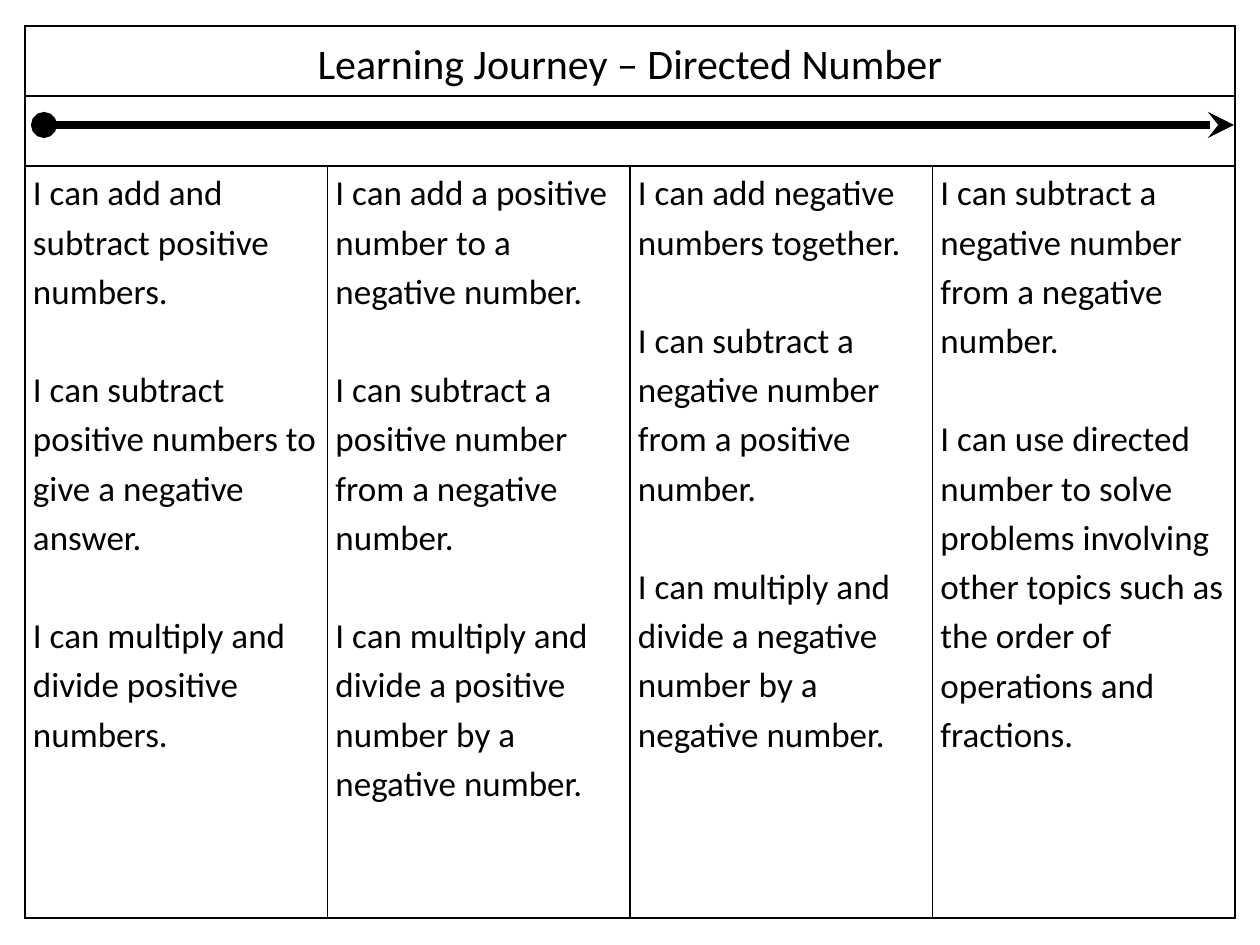
"""Build a one-slide learning journey table for directed number."""
from lxml.etree import SubElement
from pptx import Presentation
from pptx.dml.color import RGBColor
from pptx.enum.shapes import MSO_CONNECTOR as Connector
from pptx.enum.text import MSO_ANCHOR as Anchor, PP_ALIGN as Align
from pptx.oxml.ns import qn
from pptx.util import Emu, Pt

TITLE = "Learning Journey – Directed Number"
STAGES = [
    ["I can add and subtract positive numbers.",
     "I can subtract positive numbers to give a negative answer.",
     "I can multiply and divide positive numbers."],
    ["I can add a positive number to a negative number.",
     "I can subtract a positive number from a negative number.",
     "I can multiply and divide a positive number by a negative number."],
    ["I can add negative numbers together.",
     "I can subtract a negative number from a positive number.",
     "I can multiply and divide a negative number by a negative number."],
    ["I can subtract a negative number from a negative number.",
     "I can use directed number to solve problems involving other topics "
     "such as the order of operations and fractions."],
]
THEME = {"font": "Calibri", "ink": "000000", "title": 24, "body": 20,
         "spacing": 1.15, "gap": 28, "border": 1, "arrow": 5}
PAGE = (1260, 945)
TABLE = (25, 26, 1210)
ROWS = (70, 70, 752)
INSET = 8
ARROW = (44, 125, 1234, 125)


def px(length):
    return Emu(round(length * 914400 / 126))


def write(cell, lines, size, align=Align.LEFT):
    frame = cell.text_frame
    for index, line in enumerate(lines):
        para = frame.add_paragraph() if index else frame.paragraphs[0]
        para.text = line
        para.alignment = align
        para.line_spacing = THEME["spacing"]
        para.space_before = Pt(THEME["gap"] if index else 0)
        para.font.name = THEME["font"]
        para.font.size = Pt(size)
        para.font.color.rgb = RGBColor.from_string(THEME["ink"])


def style_cell(cell):
    cell.margin_left = cell.margin_right = px(INSET)
    cell.margin_top = cell.margin_bottom = 0
    properties = cell._tc.get_or_add_tcPr()
    for side in ("lnL", "lnR", "lnT", "lnB"):
        border = SubElement(properties, qn(f"a:{side}"), w=str(Pt(THEME["border"])))
        fill = SubElement(border, qn("a:solidFill"))
        SubElement(fill, qn("a:srgbClr"), val=THEME["ink"])
    cell.fill.background()


def add_journey_table(page):
    left, top, width = TABLE
    frame = page.shapes.add_table(len(ROWS), len(STAGES), px(left), px(top),
                                  px(width), px(sum(ROWS)))
    table = frame.table
    table.first_row = table.horz_banding = False
    for column in table.columns:
        column.width = px(width / len(STAGES))
    for row, height in zip(table.rows, ROWS):
        row.height = px(height)
    for cell in table.iter_cells():
        style_cell(cell)
    for row in range(2):
        table.cell(row, 0).merge(table.cell(row, len(STAGES) - 1))
    heading = table.cell(0, 0)
    heading.vertical_anchor = Anchor.MIDDLE
    write(heading, [TITLE], THEME["title"], Align.CENTER)
    for column, goals in enumerate(STAGES):
        write(table.cell(2, column), goals, THEME["body"])


def add_arrow(page):
    arrow = page.shapes.add_connector(Connector.STRAIGHT, *map(px, ARROW))
    arrow.line.width = Pt(THEME["arrow"])
    arrow.line.color.rgb = RGBColor.from_string(THEME["ink"])
    line = arrow.line._get_or_add_ln()
    SubElement(line, qn("a:headEnd"), type="oval")
    SubElement(line, qn("a:tailEnd"), type="stealth")
    SubElement(arrow._element.spPr, qn("a:effectLst"))


def main():
    deck = Presentation()
    deck.slide_width, deck.slide_height = map(px, PAGE)
    page = deck.slides.add_slide(deck.slide_layouts[6])
    add_journey_table(page)
    add_arrow(page)
    deck.save("out.pptx")


if __name__ == "__main__":
    main()
